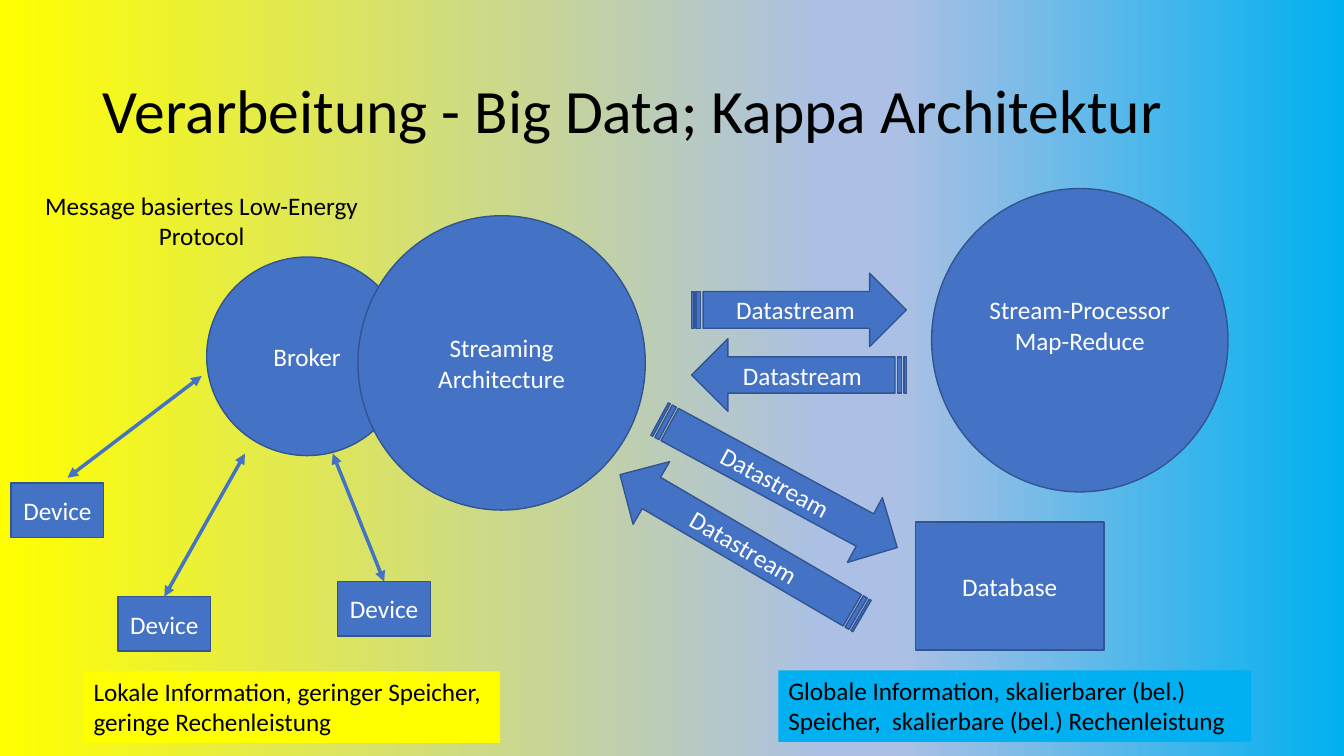
from copy import deepcopy
from pptx import Presentation
from pptx import util as u
from pptx.dml.color import RGBColor
from pptx.enum import shapes, text
from pptx.oxml import ns, xmlchemy

BLUE, EDGE, WHITE, BLACK = "4472C4", "325491", "FFFFFF", "000000"
STOPS = [(0, "FFFF00"), (0.61, "ABC0E4"), (0.67, "ABC0E4"), (1, "00B0F0")]
KIND = shapes.MSO_SHAPE
LEFT, MID = text.PP_ALIGN.LEFT, text.PP_ALIGN.CENTER
GROW = {"vertical_anchor": text.MSO_ANCHOR.TOP,
        "auto_size": text.MSO_AUTO_SIZE.SHAPE_TO_FIT_TEXT}


def tint(code):
    return RGBColor.from_string(code)


def put(item, vals):
    for name, val in vals.items():
        setattr(item, name, val)


class Board:
    """Hold the style and the current slide, and draw each kind of element."""

    def __init__(self, deck):
        self.font = {"name": "Calibri", "size": u.Pt(18)}
        self.slide = deck.slides.add_slide(deck.slide_layouts[5])
        self.forms = self.slide.shapes

    def fade(self, stops):
        fill = self.slide.background.fill
        fill.gradient()
        fill.gradient_angle = 0
        group = next(self.slide.element.iter(ns.qn("a:gsLst")))
        while len(group) < len(stops):
            group.append(deepcopy(group[0]))
        for stop, (pos, code) in zip(fill.gradient_stops, stops):
            stop.position = pos
            stop.color.rgb = tint(code)

    def words(self, item, copy, code, align=MID, frame=None, font=None, para=None):
        box = item.text_frame
        put(box, {"word_wrap": True, "vertical_anchor": text.MSO_ANCHOR.MIDDLE,
                  **(frame or {})})
        box.text = copy
        for line in box.paragraphs:
            put(line, {"alignment": align, **(para or {})})
            for run in line.runs:
                put(run.font, {**self.font, **(font or {})})
                run.font.color.rgb = tint(code)

    def title(self, copy, area):
        item = self.forms.title
        put(item, dict(zip(("left", "top", "width", "height"), map(u.Inches, area))))
        self.words(item, copy, BLACK, LEFT, {"auto_size": text.MSO_AUTO_SIZE.NONE},
                   {"size": u.Pt(44)}, {"line_spacing": 0.9})

    def shape(self, kind, area, copy, fill=BLUE, edge=EDGE, code=WHITE,
              turn=0, flip=False, **style):
        item = self.forms.add_shape(kind, *map(u.Inches, area))
        item.shadow.inherit = False
        item.rotation = turn
        item.fill.solid()
        item.fill.fore_color.rgb = tint(fill)
        if edge:
            item.line.color.rgb = tint(edge)
            item.line.width = u.Pt(1)
        else:
            item.line.fill.background()
        if flip:
            item.element.spPr.xfrm.set("flipH", "1")
        self.words(item, copy, code, **style)
        return item

    def label(self, area, copy):
        item = self.forms.add_textbox(*map(u.Inches, area))
        self.words(item, copy, BLACK, frame={**GROW, "word_wrap": False})

    def note(self, area, copy, fill):
        self.shape(KIND.RECTANGLE, area, copy, fill, None, BLACK,
                   align=LEFT, frame=GROW)

    def link(self, start, end, box=None):
        line = self.forms.add_connector(shapes.MSO_CONNECTOR.STRAIGHT,
                                        *map(u.Inches, start + end))
        line.line.color.rgb = tint(BLUE)
        line.line.width = u.Pt(2.5)
        props = line.element.spPr
        stroke = props.get_or_add_ln()
        for tag in ("a:headEnd", "a:tailEnd"):
            tip = xmlchemy.OxmlElement(tag)
            tip.set("type", "triangle")
            stroke.append(tip)
        props.append(xmlchemy.OxmlElement("a:effectLst"))
        if box is not None:
            line.begin_connect(box, 0)


def main():
    deck = Presentation()
    put(deck, {"slide_width": u.Inches(13.33), "slide_height": u.Inches(7.5)})
    board = Board(deck)
    board.fade(STOPS)
    board.title("Verarbeitung - Big Data; Kappa Architektur", (0.92, 0.4, 11.5, 1.45))

    board.shape(KIND.OVAL, (2.05, 2.55, 1.99, 1.97), "Broker")
    for left, top, start, end, join in [
            (1.17, 5.92, (1.63, 5.92), (2.43, 4.5), True),
            (3.35, 5.77, (3.81, 5.77), (3.3, 4.5), True),
            (0.11, 4.79, (0.67, 4.74), (2, 3.73), False)]:
        box = board.shape(KIND.RECTANGLE, (left, top, 0.92, 0.54), "Device")
        board.link(start, end, box if join else None)

    board.shape(KIND.OVAL, (3.55, 2.14, 2.85, 2.92), "Streaming Architecture")
    for area, turn, flip in [
            ((6.86, 3.36, 2.13, 0.72), 0, True),
            ((6.38, 4.43, 2.68, 0.73), 28.4, False),
            ((6.86, 2.71, 2.13, 0.73), 0, False),
            ((5.96, 5.05, 2.78, 0.72), 30.3, True)]:
        board.shape(KIND.STRIPED_RIGHT_ARROW, area, "Datastream", turn=turn, flip=flip)

    board.shape(KIND.RECTANGLE, (9.08, 5.18, 1.87, 1.27), "Database")
    board.label((0.33, 1.84, 3.34, 0.71), "Message basiertes Low-Energy\nProtocol")
    board.shape(KIND.OVAL, (9.24, 1.87, 2.94, 3.01), "Stream-Processor\nMap-Reduce",
                frame={"margin_bottom": u.Inches(0.35)})
    board.note((0.83, 6.66, 4.13, 0.71),
               "Lokale Information, geringer Speicher, geringe Rechenleistung", "FFFF00")
    board.note((7.72, 6.65, 4.69, 0.71),
               "Globale Information, skalierbarer (bel.) Speicher,  "
               "skalierbare (bel.) Rechenleistung", "00B0F0")
    deck.save("out.pptx")


if __name__ == "__main__":
    main()
